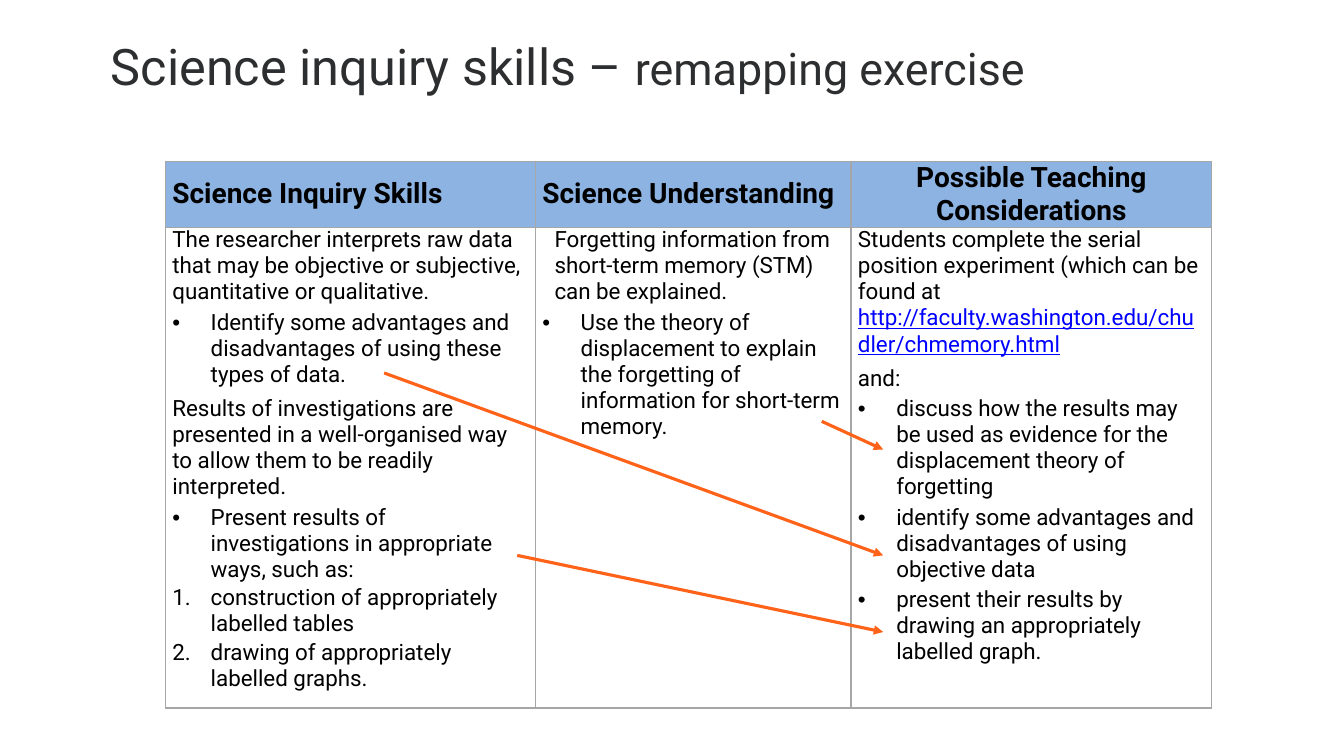
"""Build the science inquiry skills remapping slide."""
from dataclasses import dataclass

from lxml.etree import SubElement
from pptx import Presentation
from pptx.dml.color import RGBColor
from pptx.enum.shapes import MSO_CONNECTOR
from pptx.enum.text import MSO_ANCHOR, PP_ALIGN
from pptx.oxml.ns import qn
from pptx.util import Inches, Pt

FONT = "Roboto"
BLACK, TITLE, LINK = "000000", "2D2E2F", "0000FF"
HEADER, BORDER, ARROW = "8DB3E2", "A6A6A6", "FF6319"


@dataclass
class Para:
    """A paragraph of a table cell, with an optional list mark and link text."""
    text: str
    mark: str = ""
    before: float = 6
    left: float = 0
    link: str = ""


@dataclass
class Arrow:
    """An arrow between two points, in inches."""
    x1: float
    y1: float
    x2: float
    y2: float


def bullet(text: str) -> Para:
    """Return a bulleted paragraph."""
    return Para(text, "bullet", 3, 0.38)


def number(text: str) -> Para:
    """Return a numbered paragraph."""
    return Para(text, "number", 2, 0.38)


HEADINGS = [
    ("Science Inquiry Skills", PP_ALIGN.LEFT),
    ("Science Understanding", PP_ALIGN.LEFT),
    ("Possible Teaching Considerations", PP_ALIGN.CENTER),
]
COLUMNS = [
    [
        Para("The researcher interprets raw data that may be objective or "
             "subjective, quantitative or qualitative."),
        bullet("Identify some advantages and disadvantages of using these types of data."),
        Para("Results of investigations are presented in a well-organised way "
             "to allow them to be readily interpreted."),
        bullet("Present results of investigations in appropriate ways, such as:"),
        number("construction of appropriately labelled tables"),
        number("drawing of appropriately labelled graphs."),
    ],
    [
        Para("Forgetting information from short-term memory (STM) can be explained.",
             left=0.12),
        bullet("Use the theory of displacement to explain the forgetting of "
               "information for short-term memory."),
    ],
    [
        Para("Students complete the serial position experiment (which can be found at ",
             link="http://faculty.washington.edu/chudler/chmemory.html"),
        Para("and:"),
        bullet("discuss how the results may be used as evidence for the "
               "displacement theory of forgetting"),
        bullet("identify some advantages and disadvantages of using objective data"),
        bullet("present their results by drawing an appropriately labelled graph."),
    ],
]
WIDTHS = [3.67, 3.13, 3.58]
HEIGHTS = [0.65, 4.77]
ARROWS = [
    Arrow(8.15, 4.18, 8.76, 4.46),
    Arrow(3.81, 3.7, 8.76, 5.51),
    Arrow(5.13, 5.51, 8.76, 6.27),
]


def rgb(value: str) -> RGBColor:
    """Turn a hex string into a colour."""
    return RGBColor.from_string(value)


def add_run(p, text: str, *, size: float = 16, color: str = BLACK,
            bold: bool = False, underline: bool = False) -> None:
    """Add a formatted run to a paragraph."""
    r = p.add_run()
    r.text = text
    r.font.name = FONT
    r.font.size = Pt(size)
    r.font.bold = bold
    r.font.underline = underline
    r.font.color.rgb = rgb(color)


def add_mark(p, para: Para) -> None:
    """Set the indent and list mark of a paragraph."""
    pPr = p._p.get_or_add_pPr()
    pPr.set("marL", str(Inches(para.left)))
    pPr.set("indent", str(-Inches(para.left) if para.mark else 0))
    if para.mark == "bullet":
        SubElement(pPr, qn("a:buFont"), typeface="Arial")
        SubElement(pPr, qn("a:buChar"), char="•")
    elif para.mark == "number":
        SubElement(pPr, qn("a:buFont"), typeface=FONT)
        SubElement(pPr, qn("a:buAutoNum"), type="arabicPeriod")


def format_cell(cell, fill: str = "") -> None:
    """Set the margins, borders and fill of a cell."""
    cell.margin_left = cell.margin_right = Inches(0.07)
    cell.margin_top = cell.margin_bottom = 0
    tcPr = cell._tc.get_or_add_tcPr()
    for side in "LRTB":
        ln = SubElement(tcPr, qn(f"a:ln{side}"), w=str(Pt(1)))
        solid = SubElement(ln, qn("a:solidFill"))
        SubElement(solid, qn("a:srgbClr"), val=BORDER)
    if fill:
        cell.fill.solid()
        cell.fill.fore_color.rgb = rgb(fill)
    else:
        cell.fill.background()


def fill_body(cell, paras: list[Para]) -> None:
    """Write the paragraphs of a body cell."""
    tf = cell.text_frame
    for i, para in enumerate(paras):
        p = tf.add_paragraph() if i else tf.paragraphs[0]
        add_mark(p, para)
        p.space_before = Pt(para.before if i else 0)
        add_run(p, para.text)
        if para.link:
            add_run(p, para.link, color=LINK, underline=True)


def add_skills_table(s) -> None:
    """Add the table of skills, understanding and teaching considerations."""
    table = s.shapes.add_table(2, 3, Inches(1.64), Inches(1.6),
                               Inches(sum(WIDTHS)), Inches(sum(HEIGHTS))).table
    table.first_row = table.horz_banding = False
    for row, height in zip(table.rows, HEIGHTS):
        row.height = Inches(height)
    for i, (width, (heading, align), paras) in enumerate(zip(WIDTHS, HEADINGS, COLUMNS)):
        table.columns[i].width = Inches(width)
        head, body = table.cell(0, i), table.cell(1, i)
        format_cell(head, HEADER)
        head.vertical_anchor = MSO_ANCHOR.MIDDLE
        p = head.text_frame.paragraphs[0]
        p.alignment = align
        add_run(p, heading, size=20, bold=True)
        format_cell(body)
        fill_body(body, paras)


def add_arrow(s, arrow: Arrow) -> None:
    """Draw an arrow with a triangular head."""
    c = s.shapes.add_connector(MSO_CONNECTOR.STRAIGHT, Inches(arrow.x1), Inches(arrow.y1),
                               Inches(arrow.x2), Inches(arrow.y2))
    c.line.color.rgb = rgb(ARROW)
    c.line.width = Pt(2.25)
    SubElement(c.line._get_or_add_ln(), qn("a:tailEnd"), type="triangle")
    SubElement(c._element.spPr, qn("a:effectLst"))


def main() -> None:
    """Build and save the slide."""
    prs = Presentation()
    prs.slide_width, prs.slide_height = Inches(13.33), Inches(7.5)
    s = prs.slides.add_slide(prs.slide_layouts[5])
    sp = s.shapes.title
    sp.left, sp.top, sp.width, sp.height = map(Inches, (1, 0.22, 11.67, 0.94))
    tf = sp.text_frame
    tf.vertical_anchor = MSO_ANCHOR.MIDDLE
    p = tf.paragraphs[0]
    p.alignment = PP_ALIGN.LEFT
    p.line_spacing = 0.9
    add_run(p, "Science inquiry skills – ", size=36, color=TITLE)
    add_run(p, "remapping exercise", size=32, color=TITLE)
    add_skills_table(s)
    for arrow in ARROWS:
        add_arrow(s, arrow)
    prs.save("out.pptx")


if __name__ == "__main__":
    main()
